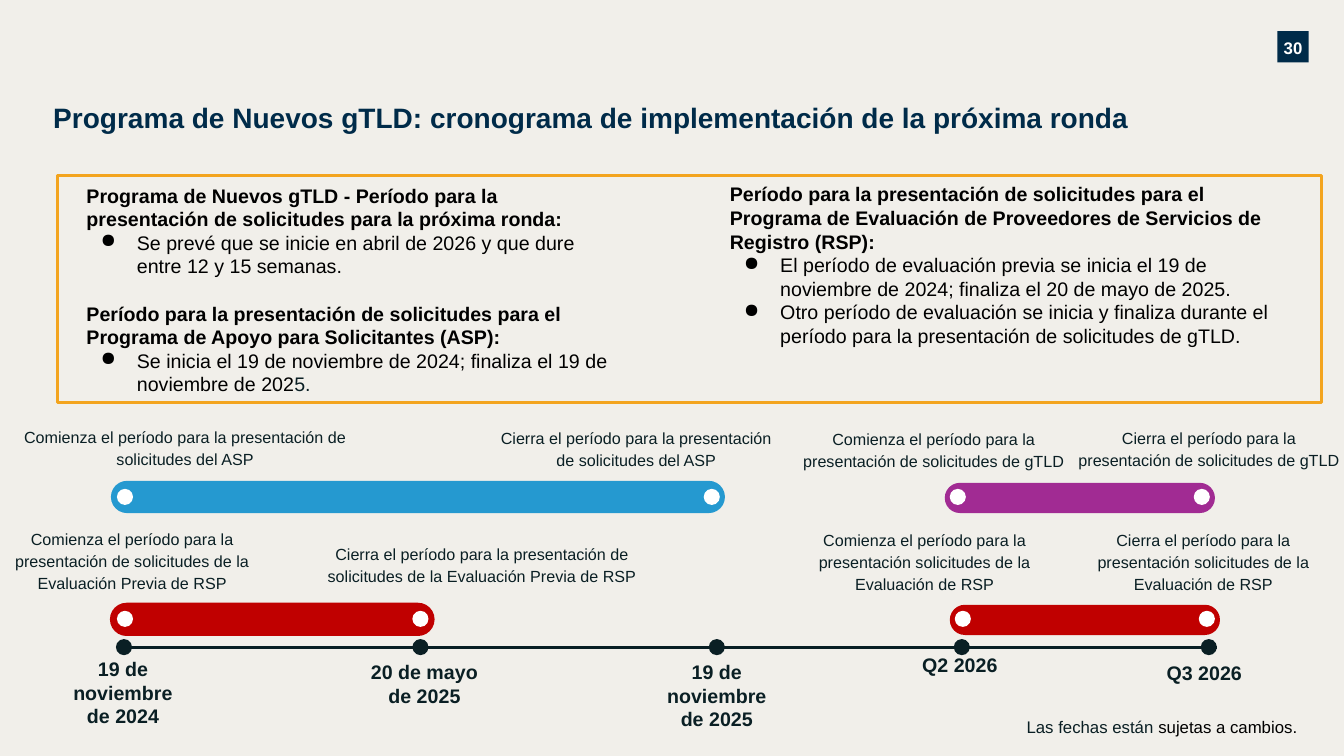
from lxml.etree import SubElement
from pptx import Presentation
from pptx.dml.color import RGBColor
from pptx.enum.shapes import MSO_CONNECTOR, MSO_SHAPE
from pptx.enum.text import MSO_ANCHOR, PP_ALIGN
from pptx.oxml.ns import qn
from pptx.util import Inches, Pt

NAVY, INK, BLACK, WHITE = "002B49", "0A1F24", "000000", "FFFFFF"
RED, BLUE, PURPLE, ORANGE = "C00000", "2599D0", "A12B93", "F3A41E"
DOT = 0.16

presentation = Presentation()
presentation.slide_width, presentation.slide_height = Inches(13.33), Inches(7.5)
slide = presentation.slides.add_slide(presentation.slide_layouts[6])
slide.background.fill.solid()
slide.background.fill.fore_color.rgb = RGBColor.from_string("F1EFEA")


def add_shape(kind, left, top, width, height, color):
    shape = slide.shapes.add_shape(kind, Inches(left), Inches(top), Inches(width), Inches(height))
    shape.shadow.inherit = False
    shape.fill.solid()
    shape.fill.fore_color.rgb = RGBColor.from_string(color)
    shape.line.fill.background()
    return shape


def write(frame, paragraphs, size, inset=(0, 0), spacing=None, align=PP_ALIGN.CENTER):
    frame.word_wrap = True
    frame.margin_left = frame.margin_right = Inches(inset[0])
    frame.margin_top = frame.margin_bottom = Inches(inset[1])
    for index, (runs, bold, bullet, before) in enumerate(paragraphs):
        paragraph = frame.paragraphs[0] if index == 0 else frame.add_paragraph()
        paragraph.alignment = align
        if spacing:
            paragraph.line_spacing = spacing
        if before:
            paragraph.space_before = Pt(before)
        if bullet:
            properties = paragraph._p.get_or_add_pPr()
            properties.set("marL", str(Inches(0.5)))
            properties.set("indent", str(-Inches(0.36)))
            bullet_color = SubElement(properties, qn("a:buClr"))
            SubElement(bullet_color, qn("a:srgbClr")).set("val", BLACK)
            SubElement(properties, qn("a:buChar")).set("char", "●")
        for text, color in runs:
            run = paragraph.add_run()
            run.text = text
            formats = {"name": "Arial", "size": Pt(size), "bold": bold}
            for attribute, value in formats.items():
                setattr(run.font, attribute, value)
            run.font.color.rgb = RGBColor.from_string(color)


page_number = add_shape(MSO_SHAPE.RECTANGLE, 12.67, 0.31, 0.31, 0.31, NAVY)
page_number.text_frame.vertical_anchor = MSO_ANCHOR.MIDDLE
write(page_number.text_frame, [([("30", WHITE)], True, False, 0)], 12, spacing=1.08)

title = slide.shapes.add_textbox(Inches(0.43), Inches(0.95), Inches(12.56), Inches(0.49))
write(
    title.text_frame,
    [([("Programa de Nuevos gTLD: cronograma de implementación de la próxima ronda", NAVY)], True, False, 0)],
    20, (0.1, 0.05), align=PP_ALIGN.LEFT,
)

summaries = [
    (0.76, 1.72, 5.37, 2.12, [
        ([("Programa de Nuevos gTLD - Período para la presentación de solicitudes para la próxima ronda:", BLACK)], True, False, 0),
        ([("Se prevé que se inicie en abril de 2026 y que dure entre 12 y 15 semanas.", BLACK)], False, True, 0),
        ([("Período para la presentación de solicitudes para el Programa de Apoyo para Solicitantes (ASP):", BLACK)], True, False, 17),
        ([("Se inicia el 19 de noviembre de 2024; finaliza el 19 de noviembre de 202", BLACK), ("5.", INK)], False, True, 0),
    ]),
    (7.14, 1.71, 5.65, 2.53, [
        ([("Período para la presentación de solicitudes para el Programa de Evaluación de Proveedores de Servicios de Registro (RSP):", BLACK)], True, False, 0),
        ([("El período de evaluación previa se inicia el 19 de noviembre de 2024; finaliza el 20 de mayo de 2025.", BLACK)], False, True, 0),
        ([("Otro período de evaluación se inicia y finaliza durante el período para la presentación de solicitudes de gTLD.", BLACK)], False, True, 0),
    ]),
]
for left, top, width, height, paragraphs in summaries:
    summary = slide.shapes.add_textbox(Inches(left), Inches(top), Inches(width), Inches(height))
    write(summary.text_frame, paragraphs, 14, (0.1, 0.1), align=PP_ALIGN.LEFT)

summary_frame = add_shape(MSO_SHAPE.RECTANGLE, 0.57, 1.74, 12.54, 2.25, WHITE)
summary_frame.fill.background()
summary_frame.line.color.rgb = RGBColor.from_string(ORANGE)
summary_frame.line.width = Pt(2)

period_labels = [
    (0.19, 4.22, 3.29, 0.44, "Comienza el período para la presentación de solicitudes del ASP"),
    (4.94, 4.23, 2.74, 0.44, "Cierra el período para la presentación de solicitudes del ASP"),
    (7.92, 4.24, 2.68, 0.44, "Comienza el período para la presentación de solicitudes de gTLD"),
    (10.65, 4.23, 2.68, 0.44, "Cierra el período para la presentación de solicitudes de gTLD"),
    (0, 5.23, 2.62, 0.66, "Comienza el período para la presentación de solicitudes de la Evaluación Previa de RSP"),
    (3.13, 5.38, 3.3, 0.44, "Cierra el período para la presentación de solicitudes de la Evaluación Previa de RSP"),
    (7.83, 5.24, 2.68, 0.66, "Comienza el período para la presentación solicitudes de la Evaluación de RSP"),
    (10.77, 5.24, 2.33, 0.66, "Cierra el período para la presentación solicitudes de la Evaluación de RSP"),
]
for left, top, width, height, text in period_labels:
    label = slide.shapes.add_textbox(Inches(left), Inches(top), Inches(width), Inches(height))
    write(label.text_frame, [([(text, INK)], False, False, 0)], 11.5, spacing=1.13)

period_bars = [
    (1.1, 4.77, 6.09, 0.32, BLUE, 4.85, (1.16, 6.98)),
    (9.37, 4.79, 2.68, 0.3, PURPLE, 4.85, (9.42, 11.84)),
    (1.09, 5.98, 3.22, 0.33, RED, 6.06, (1.16, 4.09)),
    (9.42, 6, 2.68, 0.3, RED, 6.06, (9.47, 11.89)),
]
for left, top, width, height, color, dot_top, dot_lefts in period_bars:
    bar = add_shape(MSO_SHAPE.ROUNDED_RECTANGLE, left, top, width, height, color)
    bar.adjustments[0] = 0.5
    for dot_left in dot_lefts:
        add_shape(MSO_SHAPE.OVAL, dot_left, dot_top, DOT, DOT, WHITE)

axis = slide.shapes.add_connector(MSO_CONNECTOR.STRAIGHT, Inches(1.16), Inches(6.42), Inches(12.07), Inches(6.42))
axis.line.color.rgb = RGBColor.from_string("081E23")
axis.line.width = Pt(2.25)
SubElement(axis._element.spPr, qn("a:effectLst"))

milestones = [
    (1.15, 0.49, 6.47, 1.46, "19 de noviembre de 2024"),
    (4.09, 3.48, 6.5, 1.46, "20 de mayo de 2025"),
    (7.03, 6.38, 6.5, 1.46, "19 de noviembre de 2025"),
    (9.46, 9.03, 6.43, 0.98, "Q2 2026"),
    (11.91, 11.11, 6.51, 1.67, "Q3 2026"),
]
for dot_left, left, top, width, date in milestones:
    add_shape(MSO_SHAPE.OVAL, dot_left, 6.34, DOT, DOT, INK)
    label = slide.shapes.add_textbox(Inches(left), Inches(top), Inches(width), Inches(0.43))
    write(label.text_frame, [([(date, INK)], True, False, 0)], 14, (0.1, 0.05))

footnote = slide.shapes.add_textbox(Inches(9.03), Inches(7.08), Inches(4.99), Inches(0.23))
write(
    footnote.text_frame,
    [([("Las fechas están ", INK), ("sujetas a cambios.", BLACK)], False, False, 0)],
    12, spacing=1.13,
)

presentation.save("out.pptx")
